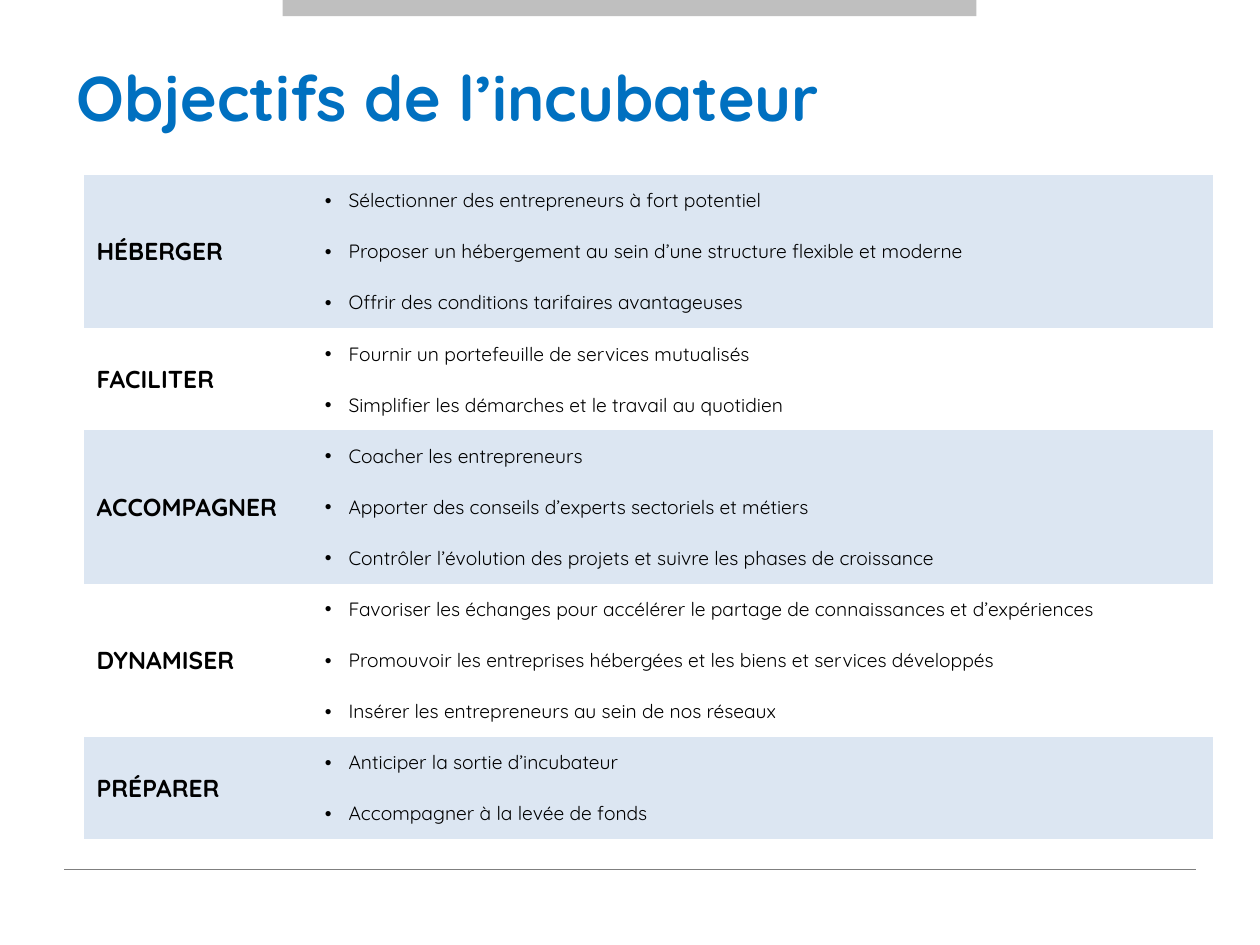
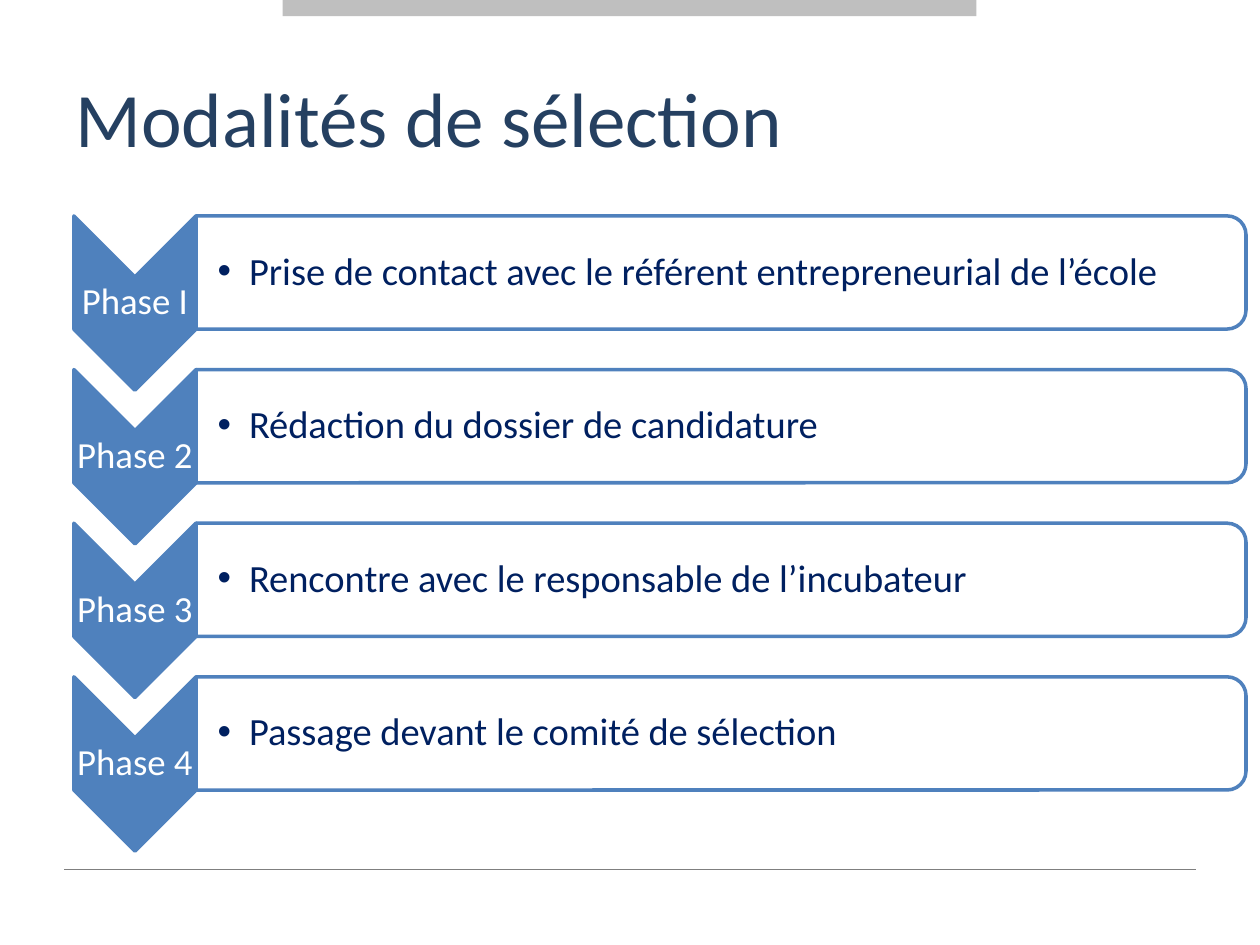
from lxml.etree import SubElement
from pptx import Presentation
from pptx.dml.color import RGBColor
from pptx.enum.shapes import MSO_CONNECTOR, MSO_SHAPE
from pptx.enum.text import MSO_ANCHOR, PP_ALIGN
from pptx.oxml.ns import qn
from pptx.util import Pt

# Colours and fonts
WHITE = RGBColor(0xFF, 0xFF, 0xFF)
BLACK = RGBColor(0, 0, 0)
GREY = RGBColor(0xBF, 0xBF, 0xBF)
RULE = RGBColor(0x7F, 0x7F, 0x7F)
SKY = RGBColor(0x00, 0x70, 0xC0)
NAVY = RGBColor(0x25, 0x40, 0x61)
INK = RGBColor(0x00, 0x20, 0x60)
BLUE = RGBColor(0x4F, 0x81, 0xBD)
PALE = RGBColor(0xDC, 0xE6, 0xF2)
ROUND, PLAIN = "Quicksand", "Calibri"
NO_GRID = "{2D5ABB26-0587-4C30-8999-92F81FD0307C}"

# Content
GOALS = [
    ("HÉBERGER", ["Sélectionner des entrepreneurs à fort potentiel",
                  "Proposer un hébergement au sein d’une structure flexible et moderne",
                  "Offrir des conditions tarifaires avantageuses"]),
    ("FACILITER", ["Fournir un portefeuille de services mutualisés",
                   "Simplifier les démarches et le travail au quotidien"]),
    ("ACCOMPAGNER", ["Coacher les entrepreneurs",
                     "Apporter des conseils d’experts sectoriels et métiers",
                     "Contrôler l’évolution des projets et suivre les phases de croissance"]),
    ("DYNAMISER", ["Favoriser les échanges pour accélérer le partage de connaissances et d’expériences",
                   "Promouvoir les entreprises hébergées et les biens et services développés",
                   "Insérer les entrepreneurs au sein de nos réseaux"]),
    ("PRÉPARER", ["Anticiper la sortie d’incubateur",
                  "Accompagner à la levée de fonds"]),
]
PHASES = [
    ("Phase I", "Prise de contact avec le référent entrepreneurial de l’école"),
    ("Phase 2", "Rédaction du dossier de candidature"),
    ("Phase 3", "Rencontre avec le responsable de l’incubateur"),
    ("Phase 4", "Passage devant le comité de sélection"),
]


def write(frame, text, size, color, font=PLAIN, bold=False, align=PP_ALIGN.LEFT,
          indent=0, spacing=None):
    """Fill a frame with one paragraph; an indent also gives it a bullet."""
    para = frame.paragraphs[0]
    if indent:
        props = para._p.get_or_add_pPr()
        props.set("marL", str(Pt(indent)))
        props.set("indent", str(-Pt(indent)))
        SubElement(props, qn("a:buFont")).set("typeface", "Arial")
        SubElement(props, qn("a:buChar")).set("char", "•")
    para.alignment = align
    if spacing:
        para.line_spacing = spacing
    run = para.add_run()
    run.text = text
    run.font.size = Pt(size)
    run.font.name = font
    run.font.bold = bold
    run.font.color.rgb = color


def add_box(slide, left, top, width, height, insets=(7.2, 3.6, 7.2, 3.6)):
    """Add a wrapped, middle-anchored text box and return its frame."""
    frame = slide.shapes.add_textbox(Pt(left), Pt(top), Pt(width), Pt(height)).text_frame
    frame.word_wrap = True
    frame.vertical_anchor = MSO_ANCHOR.MIDDLE
    (frame.margin_left, frame.margin_top,
     frame.margin_right, frame.margin_bottom) = map(Pt, insets)
    return frame


def add_form(slide, kind, left, top, width, height, fill, line=None):
    shape = slide.shapes.add_shape(kind, Pt(left), Pt(top), Pt(width), Pt(height))
    shape.shadow.inherit = False
    shape.fill.solid()
    shape.fill.fore_color.rgb = fill
    if line is None:
        shape.line.fill.background()
    else:
        shape.line.color.rgb = line
        shape.line.width = Pt(2)
    return shape


def add_turned(slide, kind, left, top, width, height, fill):
    """Add a shape turned by 90 degrees that covers the given area."""
    shift = (width - height) / 2
    shape = add_form(slide, kind, left + shift, top - shift, height, width, fill, BLUE)
    shape.rotation = 90
    return shape


def add_page(deck):
    """Add a blank slide with the top band and the foot rule."""
    slide = deck.slides.add_slide(deck.slide_layouts[6])
    rule = slide.shapes.add_connector(MSO_CONNECTOR.STRAIGHT, Pt(683.3), Pt(496.8),
                                      Pt(36.7), Pt(496.8))
    rule.line.color.rgb = RULE
    rule.line.width = Pt(0.75)
    SubElement(rule._element.spPr, qn("a:effectLst"))
    add_form(slide, MSO_SHAPE.RECTANGLE, 161.5, 0, 396.5, 9.2, GREY)
    return slide


def fill_cell(cell, fill, text, **style):
    cell.fill.solid()
    cell.fill.fore_color.rgb = fill
    cell.vertical_anchor = MSO_ANCHOR.MIDDLE
    write(cell.text_frame, text, color=BLACK, font=ROUND, **style)


def add_goals(slide):
    count = sum(len(items) for _, items in GOALS)
    high = 29.2
    table = slide.shapes.add_table(count, 2, Pt(48), Pt(100), Pt(645.4),
                                   Pt(high * count)).table
    table._tbl.tblPr.find(qn("a:tableStyleId")).text = NO_GRID
    table.first_row = table.horz_banding = False
    for col, width in zip(table.columns, (130.5, 514.9)):
        col.width = Pt(width)
    for row in table.rows:
        row.height = Pt(high)
    start = 0
    for band, (name, items) in enumerate(GOALS):
        fill = WHITE if band % 2 else PALE
        head = table.cell(start, 0)
        head.merge(table.cell(start + len(items) - 1, 0))
        fill_cell(head, fill, name, size=14, bold=True)
        for row, item in enumerate(items, start):
            fill_cell(table.cell(row, 1), fill, item, size=11, indent=13.5)
        start += len(items)


def add_phase(slide, top, name, task):
    left, mid = 42.2, 112
    add_turned(slide, MSO_SHAPE.CHEVRON, left, top, 69.8, 99.6, BLUE)
    label = add_box(slide, left, top + 35, 69.8, 29.6, [0.9] * 4)
    write(label, name, 21, WHITE, align=PP_ALIGN.CENTER, spacing=0.9)
    bar = add_turned(slide, MSO_SHAPE.ROUND_2_SAME_RECTANGLE, mid, top, 600, 64.7, WHITE)
    tint = bar._element.spPr.find(qn("a:solidFill"))[0]
    SubElement(tint, qn("a:alpha")).set("val", "90000")
    frame = add_box(slide, mid, top + 3.2, 596.5, 58.4, (12.3, 1.1, 1.1, 1.1))
    write(frame, task, 22, INK, indent=18, spacing=0.9)


def main():
    deck = Presentation()
    deck.slide_width, deck.slide_height = Pt(720), Pt(540)

    # Goals
    slide = add_page(deck)
    write(add_box(slide, 36.7, 10.1, 648, 90), "Objectifs de l’incubateur", 36, SKY,
          font=ROUND, bold=True)
    add_goals(slide)

    # Phases
    slide = add_page(deck)
    write(add_box(slide, 36, 21.6, 648, 90), "Modalités de sélection", 44, NAVY)
    for step, (name, task) in enumerate(PHASES):
        add_phase(slide, 123.4 + 87.8 * step, name, task)

    deck.save("out.pptx")


if __name__ == "__main__":
    main()
